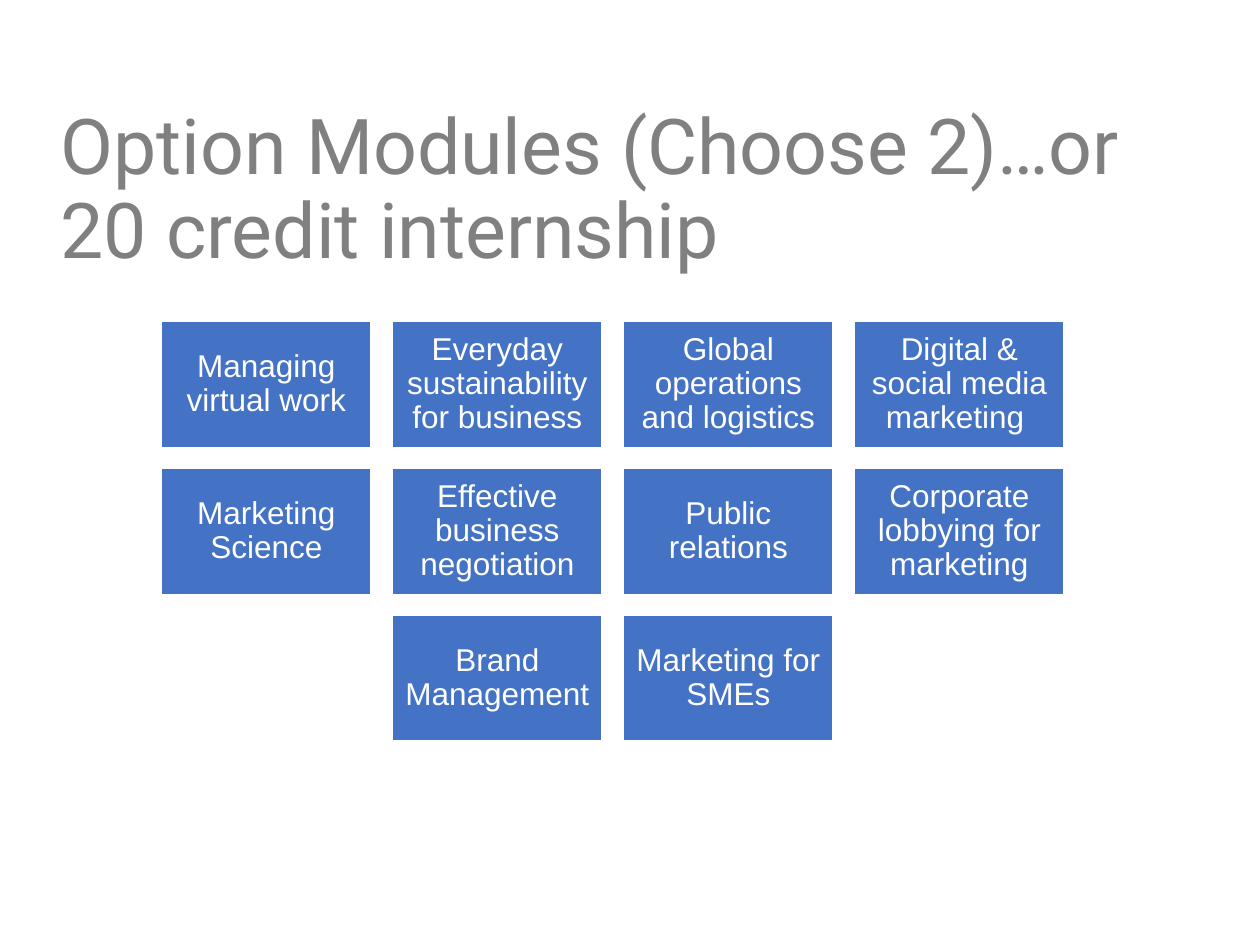
from typing import NamedTuple

from pptx import Presentation
from pptx.dml.color import RGBColor as RGB
from pptx.enum.shapes import MSO_SHAPE as Shape
from pptx.enum.text import MSO_ANCHOR as Anchor, MSO_AUTO_SIZE as Fit, PP_ALIGN as Align
from pptx.util import Pt

HUE = {"title": "808080", "tile": "4472C4", "white": "FFFFFF"}

ROWS = [
    ["Managing virtual work", "Everyday sustainability for business",
     "Global operations and logistics", "Digital & social media marketing "],
    ["Marketing Science", "Effective business negotiation",
     "Public relations", "Corporate lobbying for marketing"],
    ["Brand Management", "Marketing for SMEs"],
]
COLS = 4
LEFT, TOP = 92.2, 183.7
WIDE, HIGH, GAP = 120, 72, 12


class Tile(NamedTuple):
    text: str
    x: float
    y: float


def write(shape, text: str, *, font: str, size: float, hue: str,
          align=Align.LEFT, anchor=Anchor.TOP, pad=(7.2, 3.6)) -> None:
    frame = shape.text_frame
    frame.word_wrap = True
    frame.auto_size = Fit.NONE
    frame.vertical_anchor = anchor
    frame.margin_left = frame.margin_right = Pt(pad[0])
    frame.margin_top = frame.margin_bottom = Pt(pad[1])
    para = frame.paragraphs[0]
    para.alignment = align
    para.line_spacing = 0.9
    run = para.add_run()
    run.text = text
    run.font.name = font
    run.font.size = Pt(size)
    run.font.color.rgb = RGB.from_string(HUE[hue])


def place() -> list[Tile]:
    """Lay out the tiles, with each short row centred."""
    tiles = []
    for row, names in enumerate(ROWS):
        start = LEFT + (COLS - len(names)) * (WIDE + GAP) / 2
        for col, name in enumerate(names):
            tiles.append(Tile(name, start + col * (WIDE + GAP), TOP + row * (HIGH + GAP)))
    return tiles


def draw(slide, tile: Tile) -> None:
    box = slide.shapes.add_shape(Shape.RECTANGLE, Pt(tile.x), Pt(tile.y), Pt(WIDE), Pt(HIGH))
    box.shadow.inherit = False
    box.fill.solid()
    box.fill.fore_color.rgb = RGB.from_string(HUE["tile"])
    box.line.color.rgb = RGB.from_string(HUE["white"])
    box.line.width = Pt(1)
    write(box, tile.text, font="Arial", size=18, hue="white",
          align=Align.CENTER, anchor=Anchor.MIDDLE, pad=(5, 5))


def main() -> None:
    deck = Presentation()
    deck.slide_width, deck.slide_height = Pt(720), Pt(540)
    slide = deck.slides.add_slide(deck.slide_layouts[5])
    title = slide.shapes.title
    title.left, title.top, title.width, title.height = Pt(27.4), Pt(58.3), Pt(646.6), Pt(46.8)
    write(title, "Option Modules (Choose 2)…or 20 credit internship",
          font="Roboto", size=44, hue="title")
    for tile in place():
        draw(slide, tile)
    deck.save("out.pptx")


if __name__ == "__main__":
    main()
